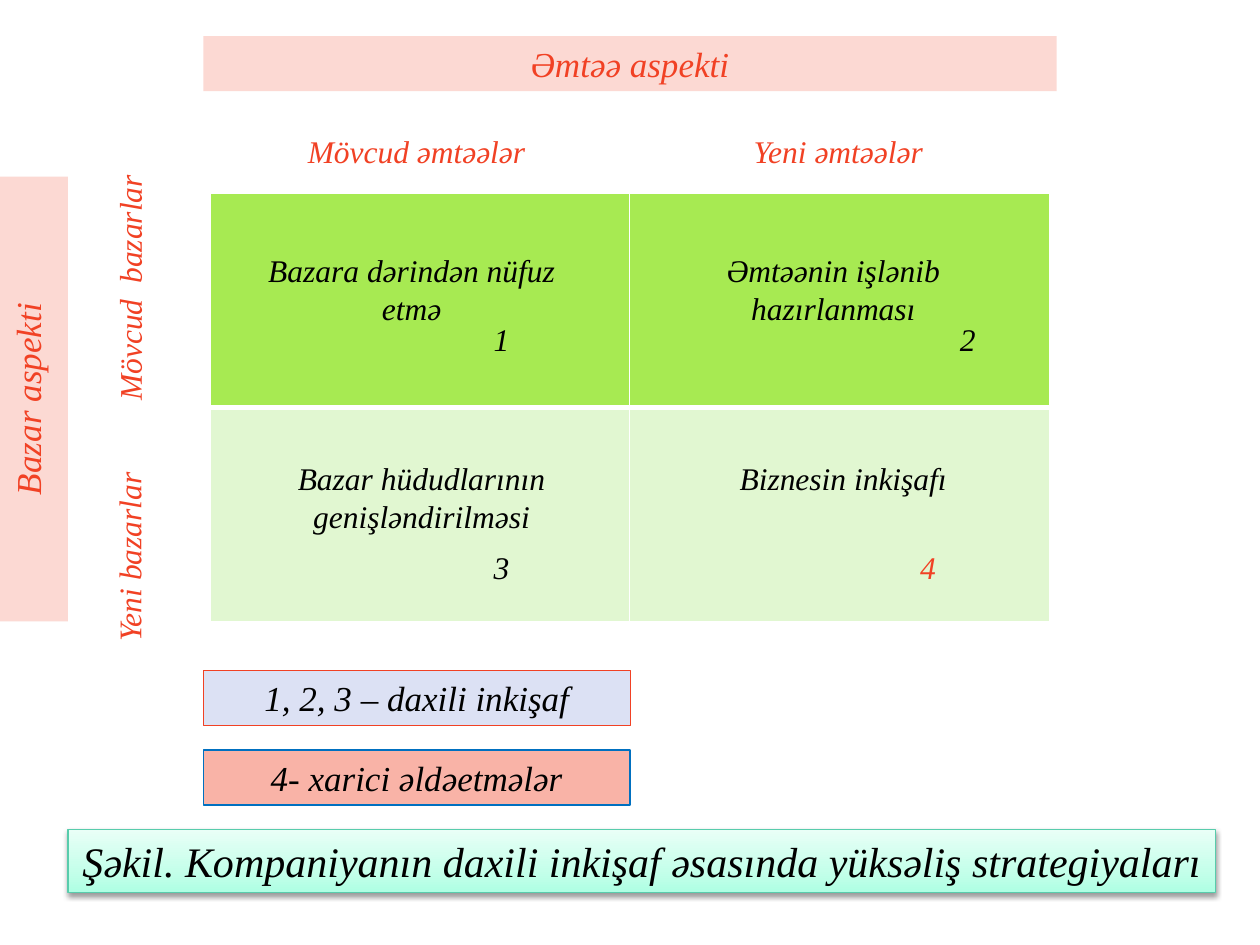
from dataclasses import dataclass

from pptx import Presentation
from pptx.dml.color import RGBColor
from pptx.enum.shapes import MSO_SHAPE
from pptx.enum.text import MSO_ANCHOR, MSO_AUTO_SIZE, PP_ALIGN
from pptx.oxml import parse_xml
from pptx.oxml.ns import nsdecls, qn
from pptx.util import Cm, Pt


@dataclass(frozen=True)
class Theme:
    font: str = "Times New Roman"
    body: int = 18
    band: int = 20
    caption: int = 24
    ink: str = "000000"
    accent: str = "F14124"
    accent_pale: str = "FCD9D3"
    accent_soft: str = "F9B3A7"
    blue_pale: str = "DCE1F4"
    blue: str = "0070C0"
    green: str = "A7EA52"
    green_pale: str = "E1F7D1"
    mint_line: str = "58CCAC"
    mint: tuple = ((0, "AEFFE3"), (35, "C5FFEA"), (100, "E9FFF7"))
    white: str = "FFFFFF"


def write(sp, text, font, size, color, align=PP_ALIGN.CENTER, vertical=False, wrap=True):
    tf = sp.text_frame
    tf.word_wrap = wrap
    tf.auto_size = MSO_AUTO_SIZE.SHAPE_TO_FIT_TEXT
    tf.vertical_anchor = MSO_ANCHOR.TOP
    if vertical:
        sp.element.txBody.find(qn("a:bodyPr")).set("vert", "vert270")
    p = tf.paragraphs[0]
    p.alignment = align
    r = p.add_run()
    r.text = text
    r.font.name = font
    r.font.size = Pt(size)
    r.font.italic = True
    r.font.color.rgb = RGBColor.from_string(color)


class Builder:
    def __init__(self, s, theme):
        self.s = s
        self.t = theme

    def label(self, text, box, color=None, **fmt):
        sp = self.s.shapes.add_textbox(*map(Cm, box))
        write(sp, text, self.t.font, self.t.body, color or self.t.ink, **fmt)

    def band(self, text, box, fill=None, line=None, weight=0.75, color=None, size=None, **fmt):
        sp = self.s.shapes.add_shape(MSO_SHAPE.RECTANGLE, *map(Cm, box))
        sp.shadow.inherit = False
        if fill:
            sp.fill.solid()
            sp.fill.fore_color.rgb = RGBColor.from_string(fill)
        if line:
            sp.line.color.rgb = RGBColor.from_string(line)
            sp.line.width = Pt(weight)
        else:
            sp.line.fill.background()
        write(sp, text, self.t.font, size or self.t.band, color or self.t.ink, **fmt)
        return sp

    def caption(self, text, box):
        sp = self.band(text, box, line=self.t.mint_line, size=self.t.caption)
        stops = "".join(
            f'<a:gs pos="{pos * 1000}"><a:srgbClr val="{color}"/></a:gs>'
            for pos, color in self.t.mint
        )
        spPr = sp.element.spPr
        spPr.find(qn("a:prstGeom")).addnext(parse_xml(
            f'<a:gradFill {nsdecls("a")} rotWithShape="1"><a:gsLst>{stops}</a:gsLst>'
            '<a:lin ang="16200000" scaled="0"/></a:gradFill>'
        ))
        spPr.find(qn("a:effectLst")).append(parse_xml(
            f'<a:outerShdw {nsdecls("a")} blurRad="{Pt(3.1)}" dist="{Pt(1.6)}" dir="5400000" '
            f'rotWithShape="0"><a:srgbClr val="{self.t.ink}"><a:alpha val="38000"/>'
            '</a:srgbClr></a:outerShdw>'
        ))

    def matrix(self, box, row_fills, cols, divider=3):
        rows = len(row_fills)
        table = self.s.shapes.add_table(rows, cols, *map(Cm, box)).table
        for i, fill in enumerate(row_fills):
            top = divider if i else 1
            bottom = divider if i < rows - 1 else 1
            for cell in table.rows[i].cells:
                cell.fill.solid()
                cell.fill.fore_color.rgb = RGBColor.from_string(fill)
                self.borders(cell, L=1, R=1, T=top, B=bottom)

    def borders(self, cell, **widths):
        tcPr = cell._tc.get_or_add_tcPr()
        for i, (side, width) in enumerate(widths.items()):
            tcPr.insert(i, parse_xml(
                f'<a:ln{side} {nsdecls("a")} w="{Pt(width)}"><a:solidFill>'
                f'<a:srgbClr val="{self.t.white}"/></a:solidFill></a:ln{side}>'
            ))


def main():
    prs = Presentation()
    prs.slide_width, prs.slide_height = Cm(25.4), Cm(19.05)
    t = Theme()
    b = Builder(prs.slides.add_slide(prs.slide_layouts[6]), t)

    b.matrix((4.23, 3.89, 16.93, 8.64), (t.green, t.green_pale), 2)

    axis = {"fill": t.accent_pale, "color": t.accent}
    b.band("Əmtəə aspekti", (4.1, 0.73, 17.2, 1.11), **axis)
    b.band("Bazar aspekti", (0, 3.56, 1.37, 8.97), vertical=True, **axis)

    b.label("Mövcud əmtəələr", (4.1, 2.53, 8.6, 1.03), t.accent)
    b.label("Yeni əmtəələr", (12.7, 2.53, 8.4, 1.03), t.accent)
    b.label("Mövcud  bazarlar", (2.1, 3.05, 1.28, 5.28), t.accent,
            align=PP_ALIGN.LEFT, vertical=True)
    b.label("Yeni bazarlar", (2.09, 8.33, 1.28, 5.8), t.accent, vertical=True)

    strategies = (
        ("Bazara dərindən nüfuz etmə", (5.1, 4.93, 6.4, 1.8)),
        ("Əmtəənin işlənib hazırlanması", (13.9, 4.93, 5.8, 1.8)),
        ("Bazar hüdudlarının genişləndirilməsi", (5.5, 9.13, 6, 1.8)),
        ("Biznesin inkişafı", (13.9, 9.13, 6.2, 1.03)),
    )
    for text, box in strategies:
        b.label(text, box)

    numbers = (
        ("1", (9.7, 6.33, 1.8, 1.03), t.ink, True),
        ("2", (19.1, 6.33, 0.83, 1.03), t.ink, False),
        ("3", (9.7, 10.93, 0.9, 1.03), t.ink, True),
        ("4", (18.3, 10.93, 2.2, 1.03), t.accent, True),
    )
    for text, box, color, wrap in numbers:
        b.label(text, box, color, align=PP_ALIGN.LEFT, wrap=wrap)

    b.band("1, 2, 3 – daxili inkişaf", (4.1, 13.52, 8.61, 1.11),
           fill=t.blue_pale, line=t.accent, weight=0.25)
    b.band("4- xarici əldəetmələr", (4.1, 15.12, 8.6, 1.11), fill=t.accent_soft, line=t.blue)
    b.caption("Şəkil. Kompaniyanın daxili inkişaf əsasında yüksəliş strategiyaları",
              (1.37, 16.72, 23.14, 1.28))

    prs.save("out.pptx")


if __name__ == "__main__":
    main()
